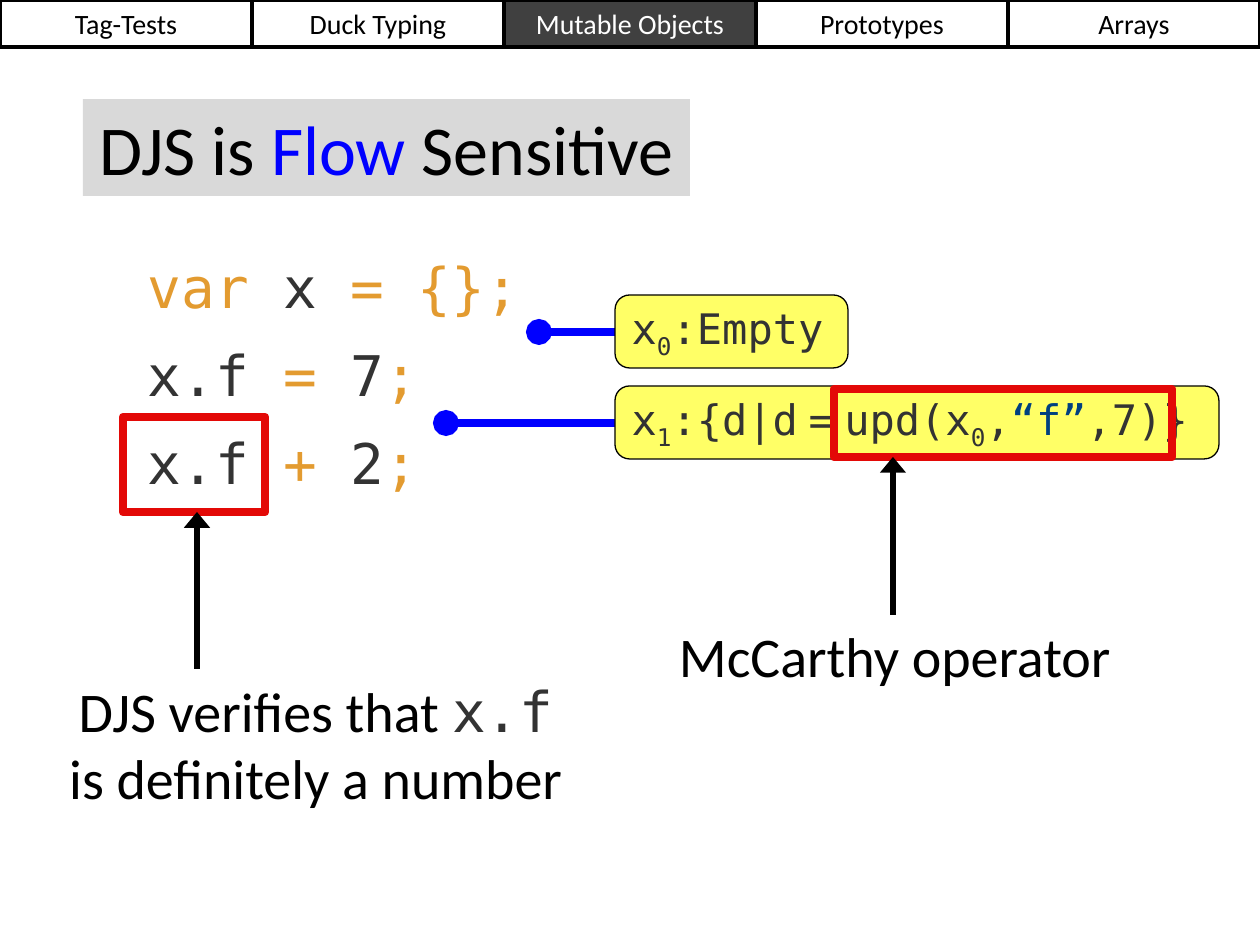
import pptx
import pptx.util
import pptx.dml.color
import pptx.enum.shapes
import pptx.enum.text
import pptx.oxml.ns
from lxml import etree

SCALE = 914400 / 126
SANS, MONO = "Calibri", "DejaVu Sans Mono"
COLORS = {
    "black": "000000", "white": "FFFFFF", "dark": "404040", "gray": "D9D9D9",
    "code": "333333", "gold": "E39B30", "blue": "0000FF", "navy": "004080",
    "yellow": "FFFF66", "red": "E30907",
}
TABS = ["Tag-Tests", "Duck Typing", "Mutable Objects", "Prototypes", "Arrays"]
ACTIVE = 2
CODE = [
    [("var ", "gold"), ("x ", "code"), ("= {};", "gold")],
    [("x.f ", "code"), ("= ", "gold"), ("7", "code"), (";", "gold")],
    [("x.f ", "code"), ("+ ", "gold"), ("2", "code"), (";", "gold")],
]
SUB = {"sub": True}
THIN = {"size": 10}
EMPTY = [("x", "code"), ("0", "code", SUB), (":Empty", "code")]
UPDATE = [
    ("x", "code"), ("1", "code", SUB), (":{d|d", "code"), (" ", "code", THIN),
    ("=", "code"), (" ", "code", THIN), ("upd(x", "code"), ("0", "code", SUB),
    (",", "code"), ("“f”", "navy"), (",7)}", "code"),
]


def px(*vals):
    """Turn pixels into EMU."""
    return [pptx.util.Emu(round(v * SCALE)) for v in vals]


def rgb(name):
    """Look up a colour by name."""
    return pptx.dml.color.RGBColor.from_string(COLORS[name])


def write(shape, paras, size, face=SANS, center=True, after=0, wrap=True):
    """Fill a shape with paragraphs of (text, colour, options) runs."""
    frame = shape.text_frame
    frame.word_wrap = wrap
    frame.vertical_anchor = pptx.enum.text.MSO_ANCHOR.MIDDLE
    align = pptx.enum.text.PP_ALIGN
    for i, runs in enumerate(paras):
        para = frame.add_paragraph() if i else frame.paragraphs[0]
        para.alignment = align.CENTER if center else align.LEFT
        para.space_after = pptx.util.Pt(after)
        para.font.size = pptx.util.Pt(size)
        para.font.name = face
        for text, color, *rest in runs:
            opts = rest[0] if rest else {}
            run = para.add_run()
            run.text = text
            run.font.color.rgb = rgb(color)
            if "face" in opts:
                run.font.name = opts["face"]
            if "size" in opts:
                run.font.size = pptx.util.Pt(opts["size"])
            if "sub" in opts:
                run._r.get_or_add_rPr().set("baseline", "-25000")


def box(slide, at, fill=None, line=None, width=1, kind="RECTANGLE"):
    """Add a preset shape with an optional fill and outline."""
    shape = slide.shapes.add_shape(
        pptx.enum.shapes.MSO_SHAPE[kind], *px(*at))
    shape.shadow.inherit = False
    if fill:
        shape.fill.solid()
        shape.fill.fore_color.rgb = rgb(fill)
    else:
        shape.fill.background()
    if line:
        shape.line.color.rgb = rgb(line)
        shape.line.width = pptx.util.Pt(width)
    else:
        shape.line.fill.background()
    return shape


def label(slide, at, paras, size, **opts):
    """Add a text box."""
    shape = slide.shapes.add_textbox(*px(*at))
    write(shape, paras, size, **opts)
    return shape


def link(slide, ends, color, width, end, **tip):
    """Add a line with a tip at its headEnd or tailEnd."""
    line = slide.shapes.add_connector(
        pptx.enum.shapes.MSO_CONNECTOR.STRAIGHT, *px(*ends))
    line.line.color.rgb = rgb(color)
    line.line.width = pptx.util.Pt(width)
    qn = pptx.oxml.ns.qn
    etree.SubElement(line.line._get_or_add_ln(), qn("a:" + end), **tip)
    etree.SubElement(line._element.spPr, qn("a:effectLst"))


def tab(slide, i):
    """Add one tab of the top bar."""
    on = i == ACTIVE
    shape = box(slide, (252 * i, 0, 252, 47), "dark" if on else None,
                "black", 2)
    write(shape, [[(TABS[i], "white" if on else "black")]], 16)


def state(slide, start, top, width, runs):
    """Add a yellow type note tied to a point in the code."""
    link(slide, (start, top + 37, 615, top + 37), "blue", 5,
         "headEnd", type="oval")
    note = box(slide, (615, top, width, 73), "yellow", "black", 0.75,
               "ROUNDED_RECTANGLE")
    note.adjustments[0] = 0.2
    write(note, [runs], 24, face=MONO, center=False, wrap=False)


def callout(slide, frame, text, runs, x):
    """Add a red frame, its caption and an arrow between them."""
    box(slide, frame, line="red", width=5)
    label(slide, text, [runs], 32)
    link(slide, (x, text[1], x, frame[1] + frame[3]), "black", 3,
         "tailEnd", type="triangle", w="lg", len="med")


def main():
    """Build the slide."""
    deck = pptx.Presentation()
    deck.slide_width, deck.slide_height = px(1260, 945)
    slide = deck.slides.add_slide(deck.slide_layouts[6])
    for i in sorted(range(len(TABS)), key=lambda i: i != ACTIVE):
        tab(slide, i)
    code = label(slide, (148, 252, 373, 246), CODE, 32, face=MONO,
                 center=False, after=12, wrap=False)
    frame = code.text_frame
    frame.vertical_anchor = pptx.enum.text.MSO_ANCHOR.TOP
    frame.margin_left = frame.margin_right = 0
    frame.margin_top = frame.margin_bottom = 0
    state(slide, 539, 295, 233, EMPTY)
    state(slide, 446, 386, 604, UPDATE)
    title = box(slide, (83, 99, 607, 97), "gray")
    write(title, [[("DJS is ", "black"), ("Flow ", "blue"),
                   ("Sensitive", "black")]], 40, wrap=False)
    callout(slide, (834, 389, 338, 68), (646, 615, 498, 81),
            [("McCarthy operator", "black")], 893)
    callout(slide, (123, 417, 142, 95), (45, 669, 542, 149),
            [("DJS verifies that ", "black"), ("x.f", "code", {"face": MONO}),
             (" is definitely a number", "black")], 197)
    deck.save("out.pptx")


main()
